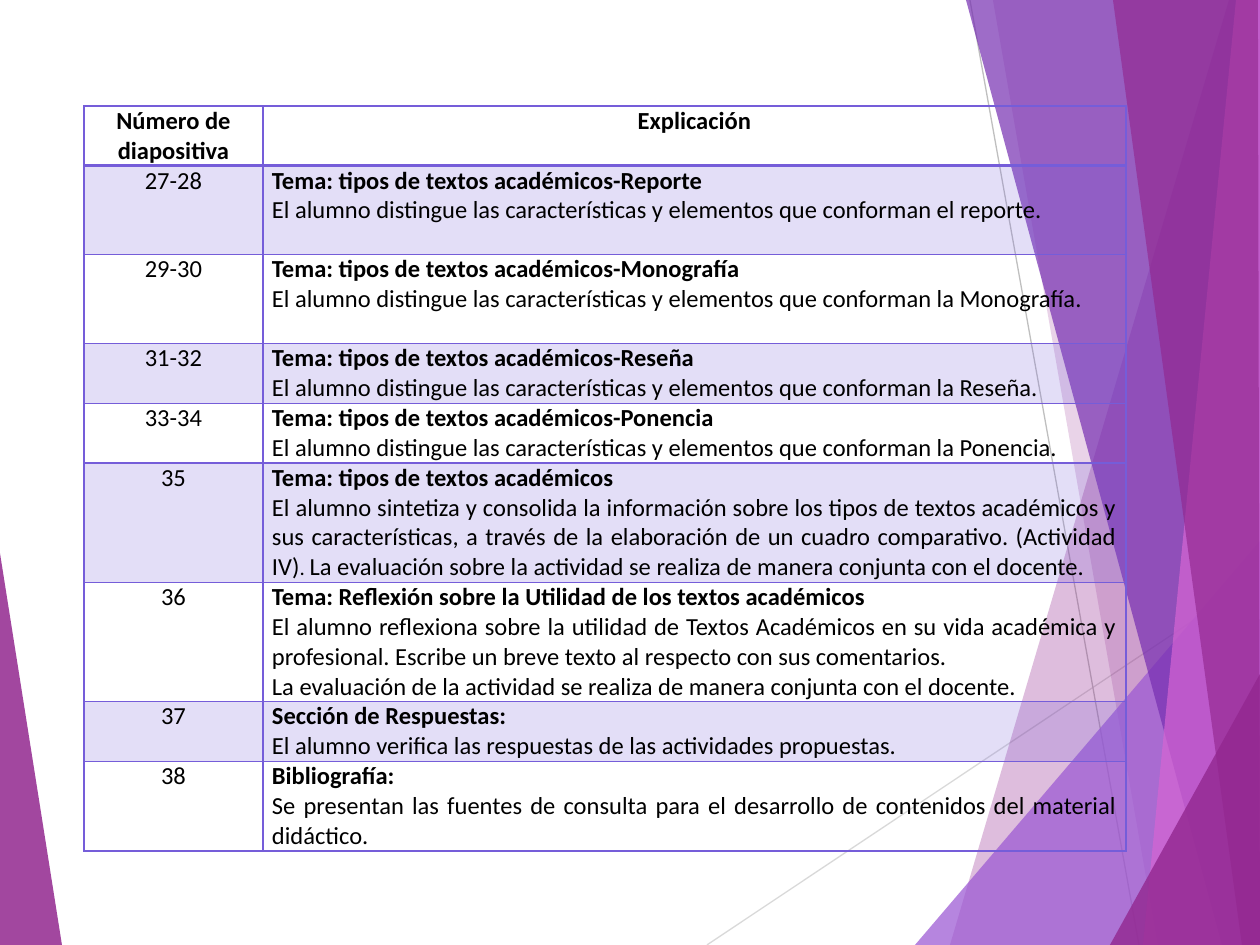
import pptx
import pptx.util
import pptx.dml.color
import pptx.enum.shapes
import pptx.enum.text
import pptx.oxml
import pptx.oxml.ns

PX = 914400 // 126
WIDTH, HEIGHT = 1260, 945
ACCENT = "755DD9"
FONT = "Calibri"

LINES = [
    ((707, 945), (1260, 576), "D9D9D9"),
    ((970, 0), (1139, 945), "BFBFBF"),
]
LEFT_FACET = ([(0, 553), (62, 945), (0, 945)], "92278F", 85)
RIGHT_FACETS = [
    ([(1229, 0), (950, 945), (1260, 945), (1260, 0)], "92278F", 30),
    ([(993, 0), (1158, 945), (1260, 945), (1260, 0)], "92278F", 20),
    ([(915, 945), (1260, 541), (1260, 945)], "9B57D3", 72),
    ([(966, 0), (1222, 945), (1260, 945), (1260, 0)], "762EB1", 70),
    ([(1236, 0), (1143, 945), (1260, 945), (1260, 0)], "D665D3", 70),
    ([(1113, 0), (1242, 945), (1260, 945), (1258, 0)], "92278F", 65),
    ([(1110, 945), (1260, 674), (1260, 945)], "92278F", 80),
]

TABLE_LEFT, TABLE_TOP, TABLE_HEIGHT = 84, 106, 746
COLUMNS = [179, 863]
HEADER = ["Número de diapositiva", "Explicación"]
ROWS = [
    ("27-28", 3, "Tema: tipos de textos académicos-Reporte",
     ["El alumno distingue las características y elementos que conforman el reporte."]),
    ("29-30", 3, "Tema: tipos de textos académicos-Monografía",
     ["El alumno distingue las características y elementos que conforman la Monografía."]),
    ("31-32", 2, "Tema: tipos de textos académicos-Reseña",
     ["El alumno distingue las características y elementos que conforman la Reseña."]),
    ("33-34", 2, "Tema: tipos de textos académicos-Ponencia",
     ["El alumno distingue las características y elementos que conforman la Ponencia."]),
    ("35", 4, "Tema: tipos de textos académicos",
     [("El alumno sintetiza y consolida la información sobre los tipos de textos "
       "académicos y sus características, a través de la elaboración de un cuadro "
       "comparativo. (Actividad IV)", ". ",
       "La evaluación sobre la actividad se realiza de manera conjunta con el docente.")]),
    ("36", 4, "Tema: Reflexión sobre la Utilidad de los textos académicos",
     ["El alumno reflexiona sobre la utilidad de Textos Académicos en su vida académica "
      "y profesional. Escribe un breve texto al respecto con sus comentarios.",
      "La evaluación de la actividad se realiza de manera conjunta con el docente."]),
    ("37", 2, "Sección de Respuestas:",
     ["El alumno verifica las respuestas de las actividades propuestas."]),
    ("38", 3, "Bibliografía:",
     ["Se presentan las fuentes de consulta para el desarrollo de contenidos del "
      "material didáctico."]),
]
HEADER_LINES = 2


def rgb(value):
    return pptx.dml.color.RGBColor.from_string(value)


def paint(target, properties, color, opacity):
    target.fill.solid()
    target.fill.fore_color.rgb = rgb(color)
    tint = properties.find(pptx.oxml.ns.qn("a:solidFill"))[0]
    alpha = pptx.oxml.parse_xml(
        f'<a:alpha {pptx.oxml.ns.nsdecls("a")} val="{opacity * 1000}"/>')
    tint.append(alpha)


def add_facet(page, points, color, opacity):
    builder = page.shapes.build_freeform(*points[0], scale=PX)
    builder.add_line_segments(points[1:], close=True)
    shape = builder.convert_to_shape()
    shape.shadow.inherit = False
    shape.line.fill.background()
    paint(shape, shape._element.spPr, color, opacity)


def add_line(page, start, end, color):
    line = page.shapes.add_connector(
        pptx.enum.shapes.MSO_CONNECTOR.STRAIGHT,
        *(value * PX for value in start + end))
    line.line.color.rgb = rgb(color)
    line.line.width = pptx.util.Pt(0.75)
    line._element.spPr.append(pptx.oxml.parse_xml(
        f'<a:effectLst {pptx.oxml.ns.nsdecls("a")}/>'))


def add_borders(cell, top, bottom):
    properties = cell._tc.get_or_add_tcPr()
    for side, points in (("L", 1), ("R", 1), ("T", top), ("B", bottom)):
        properties.append(pptx.oxml.parse_xml(
            f'<a:ln{side} {pptx.oxml.ns.nsdecls("a")} w="{points * 12700}">'
            f'<a:solidFill><a:srgbClr val="{ACCENT}"/></a:solidFill></a:ln{side}>'))


def write(cell, paragraphs, align):
    cell.margin_left = cell.margin_right = 9 * PX
    cell.margin_top = cell.margin_bottom = 0
    frame = cell.text_frame
    for index, (content, bold) in enumerate(paragraphs):
        para = frame.add_paragraph() if index else frame.paragraphs[0]
        para.alignment = align
        para.font.name = FONT
        para.font.size = pptx.util.Pt(14)
        para.font.bold = bold
        para.font.color.rgb = rgb("000000")
        for part in [content] if isinstance(content, str) else content:
            span = para.add_run()
            span.text = part
            if part == ". ":
                span.font.size = pptx.util.Pt(12)


def add_schedule(page):
    lines = [HEADER_LINES] + [row[1] for row in ROWS]
    frame = page.shapes.add_table(
        len(lines), len(COLUMNS), TABLE_LEFT * PX, TABLE_TOP * PX,
        sum(COLUMNS) * PX, TABLE_HEIGHT * PX)
    table = frame.table
    table.first_row = table.horz_banding = False
    for column, width in zip(table.columns, COLUMNS):
        column.width = width * PX
    for row, count in zip(table.rows, lines):
        row.height = TABLE_HEIGHT * count // sum(lines) * PX

    center = pptx.enum.text.PP_ALIGN.CENTER
    justify = pptx.enum.text.PP_ALIGN.JUSTIFY
    for index, title in enumerate(HEADER):
        write(table.cell(0, index), [(title, True)], center)
    for index, (number, _, topic, details) in enumerate(ROWS, 1):
        write(table.cell(index, 0), [(number, False)], center)
        write(table.cell(index, 1),
              [(topic, True)] + [(detail, False) for detail in details], justify)

    for index, row in enumerate(table.rows):
        for cell in row.cells:
            add_borders(cell, 2 if index == 1 else 1, 2 if index == 0 else 1)
            if index % 2:
                paint(cell, cell._tc.get_or_add_tcPr(), ACCENT, 20)
            else:
                cell.fill.background()


def main():
    deck = pptx.Presentation()
    deck.slide_width, deck.slide_height = pptx.util.Inches(10), pptx.util.Inches(7.5)
    page = deck.slides.add_slide(deck.slide_layouts[6])
    page.background.fill.solid()
    page.background.fill.fore_color.rgb = rgb("FFFFFF")
    add_facet(page, *LEFT_FACET)
    for line in LINES:
        add_line(page, *line)
    for facet in RIGHT_FACETS:
        add_facet(page, *facet)
    add_schedule(page)
    deck.save("out.pptx")


if __name__ == "__main__":
    main()
